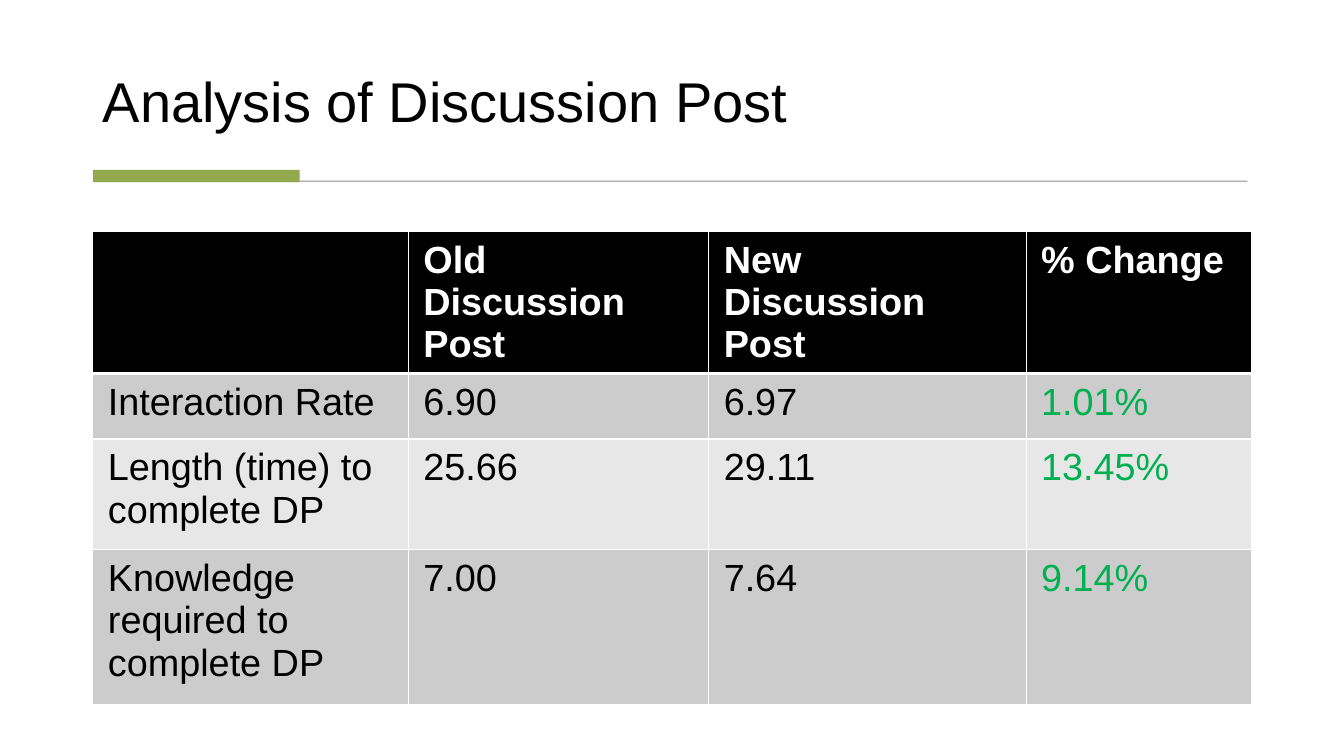
from lxml import etree
from pptx import Presentation
from pptx.dml.color import RGBColor
from pptx.enum.shapes import MSO_SHAPE
from pptx.enum.text import MSO_ANCHOR, PP_ALIGN
from pptx.oxml.ns import qn
from pptx.util import Cm, Pt

RECTANGLE = MSO_SHAPE.RECTANGLE
BOTTOM = MSO_ANCHOR.BOTTOM
LEFT = PP_ALIGN.LEFT
TITLE_ONLY = 5

FONT = "Arial"
COLORS = {
    "text": "000000",
    "header": "000000",
    "header_text": "FFFFFF",
    "border": "FFFFFF",
    "odd_row": "CCCCCC",
    "even_row": "E7E7E7",
    "gain": "00B050",
    "accent": "94A84E",
    "rule": "595959",
}

MARGIN = 2.34
COLUMN_WIDTHS = [7.95, 7.57, 8.0, 5.69]
ROW_HEIGHTS = [3.53, 1.65, 2.79, 3.91]
RESULTS = [
    ["", "Old Discussion Post", "New Discussion Post", "% Change"],
    ["Interaction Rate", "6.90", "6.97", "1.01%"],
    ["Length (time) to complete DP", "25.66", "29.11", "13.45%"],
    ["Knowledge required to complete DP", "7.00", "7.64", "9.14%"],
]


def rgb(name):
    return RGBColor.from_string(COLORS[name])


def write(frame, text, size=27, color="text", bold=False, spacing=1.0):
    """Put one formatted paragraph into a text frame."""
    paragraph = frame.paragraphs[0]
    paragraph.alignment = LEFT
    paragraph.line_spacing = spacing
    run = paragraph.add_run()
    run.text = text
    run.font.name = FONT
    run.font.size = Pt(size)
    run.font.bold = bold
    run.font.color.rgb = rgb(color)


def set_alpha(fill_parent, percent):
    color = fill_parent.find(qn("a:solidFill")).find(qn("a:srgbClr"))
    etree.SubElement(color, qn("a:alpha"), val=str(percent * 1000))


def add_bar(slide, left, top, width, height, color, line_width=0, alpha=100):
    """Draw a flat bar, optionally outlined and see-through."""
    bar = slide.shapes.add_shape(RECTANGLE, Cm(left), Cm(top), Cm(width), Cm(height))
    bar.shadow.inherit = False
    bar.fill.solid()
    bar.fill.fore_color.rgb = rgb(color)
    if line_width:
        bar.line.color.rgb = rgb(color)
        bar.line.width = Pt(line_width)
    else:
        bar.line.fill.background()
    if alpha < 100:
        properties = bar._element.spPr
        set_alpha(properties, alpha)
        if line_width:
            set_alpha(properties.find(qn("a:ln")), alpha)


def set_borders(cell, **widths):
    """Add cell borders, given in points by side: L, R, T, B."""
    properties = cell._tc.get_or_add_tcPr()
    for position, side in enumerate("LRTB"):
        border = etree.Element(qn(f"a:ln{side}"), w=str(Pt(widths.get(side, 1))))
        fill = etree.SubElement(border, qn("a:solidFill"))
        etree.SubElement(fill, qn("a:srgbClr"), val=COLORS["border"])
        properties.insert(position, border)


def add_title(slide, text):
    title = slide.shapes.title
    title.left, title.top = Cm(MARGIN), Cm(0.71)
    title.width, title.height = Cm(29.18), Cm(2.82)
    title.text_frame.word_wrap = True
    title.text_frame.vertical_anchor = BOTTOM
    write(title.text_frame, text, size=40, spacing=0.9)


def fill_cell(cell, text, row, column):
    is_header = row == 0
    cell.margin_left = cell.margin_right = Cm(0.38)
    cell.margin_top = cell.margin_bottom = Cm(0.19)
    cell.fill.solid()
    if is_header:
        background, color = "header", "header_text"
    else:
        background = "odd_row" if row % 2 else "even_row"
        color = "gain" if column == len(COLUMN_WIDTHS) - 1 else "text"
    cell.fill.fore_color.rgb = rgb(background)
    set_borders(cell, T=3 if row == 1 else 1, B=3 if is_header else 1)
    if text:
        write(cell.text_frame, text, color=color, bold=is_header)


def add_results_table(slide):
    table = slide.shapes.add_table(
        len(ROW_HEIGHTS), len(COLUMN_WIDTHS), Cm(MARGIN), Cm(5.83),
        Cm(sum(COLUMN_WIDTHS)), Cm(sum(ROW_HEIGHTS))).table
    for column, width in zip(table.columns, COLUMN_WIDTHS):
        column.width = Cm(width)
    for row, height in zip(table.rows, ROW_HEIGHTS):
        row.height = Cm(height)
    for r, values in enumerate(RESULTS):
        for c, text in enumerate(values):
            fill_cell(table.cell(r, c), text, r, c)


def main():
    deck = Presentation()
    deck.slide_width, deck.slide_height = Cm(33.87), Cm(19.05)
    slide = deck.slides.add_slide(deck.slide_layouts[TITLE_ONLY])

    # Title with its divider
    add_title(slide, "Analysis of Discussion Post")
    add_bar(slide, 2.4, 4.56, 29.03, 0.02, "rule", line_width=0.75, alpha=30)
    add_bar(slide, MARGIN, 4.28, 5.21, 0.31, "accent")

    # Comparison of the old and new posts
    add_results_table(slide)

    deck.save("out.pptx")


if __name__ == "__main__":
    main()
